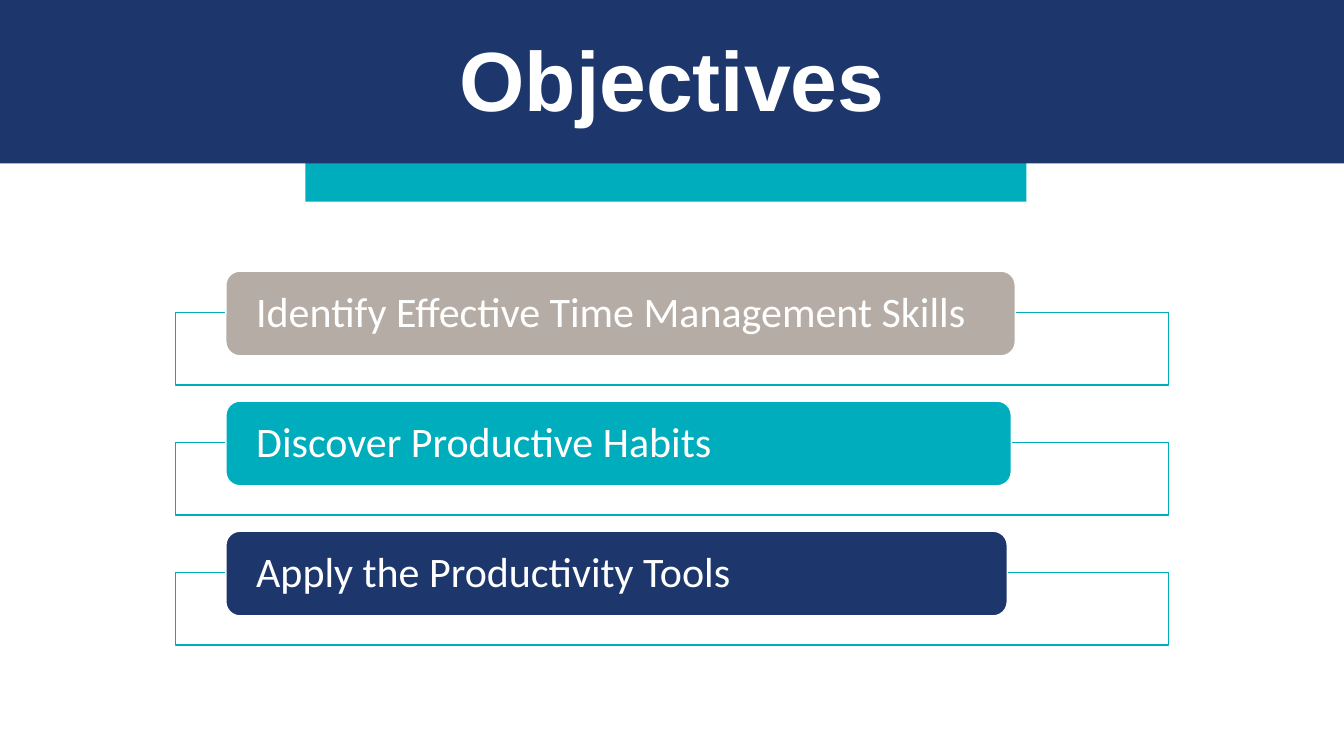
from pptx import Presentation
from pptx.dml.color import RGBColor
from pptx.enum.shapes import MSO_SHAPE as SHAPE
from pptx.enum.text import MSO_ANCHOR as ANCHOR, PP_ALIGN as ALIGN
from pptx.util import Inches, Pt

NAVY, TEAL, TAUPE, WHITE = "1D376C", "00ADBC", "B5ADA5", "FFFFFF"


def rgb(value):
    return RGBColor.from_string(value)


def write(tf, text, size=30, font="Calibri", color=WHITE, bold=False,
          align=ALIGN.LEFT, anchor=ANCHOR.TOP, spacing=None, margins=None):
    """Put one formatted paragraph in a text frame."""
    tf.word_wrap = True
    tf.vertical_anchor = anchor
    if margins:
        (tf.margin_left, tf.margin_top,
         tf.margin_right, tf.margin_bottom) = map(Inches, margins)
    p = tf.paragraphs[0]
    p.alignment = align
    if spacing:
        p.line_spacing = spacing
    r = p.add_run()
    r.text = text
    r.font.size, r.font.name, r.font.bold = Pt(size), font, bold
    r.font.color.rgb = rgb(color)


class SlideBuilder:
    def __init__(self, slide):
        self.s = slide

    def shape(self, kind, x, y, w, h, fill, line=None):
        sp = self.s.shapes.add_shape(kind, *map(Inches, (x, y, w, h)))
        sp.shadow.inherit = False
        sp.fill.solid()
        sp.fill.fore_color.rgb = rgb(fill)
        if line:
            sp.line.color.rgb = rgb(line)
            sp.line.width = Pt(1)
        else:
            sp.line.fill.background()
        return sp

    def title(self, text, x, y, w, h, **fmt):
        sp = self.s.shapes.title
        sp.left, sp.top, sp.width, sp.height = map(Inches, (x, y, w, h))
        write(sp.text_frame, text, **fmt)
        # Bring the title in front of the header band
        self.s.shapes[-1].element.addnext(sp.element)

    def objective(self, text, y, w, fill):
        self.shape(SHAPE.RECTANGLE, 1.74, y + 0.41, 9.85, 0.72, WHITE, TEAL)
        bar = self.shape(SHAPE.ROUNDED_RECTANGLE, 2.24, y, w, 0.84, fill, WHITE)
        write(bar.text_frame, text, anchor=ANCHOR.MIDDLE, spacing=0.9,
              margins=(0.26, 0, 0.26, 0))


def main():
    prs = Presentation()
    prs.slide_width, prs.slide_height = Inches(13.33), Inches(7.5)
    b = SlideBuilder(prs.slides.add_slide(prs.slide_layouts[5]))

    # Header
    b.shape(SHAPE.RECTANGLE, 3.03, 1.38, 7.15, 0.62, TEAL)
    b.shape(SHAPE.RECTANGLE, -0.12, 0, 13.53, 1.62, NAVY)
    b.title("Objectives", 0, 0.32, 13.33, 1.03, size=60, font="Arial",
            bold=True, align=ALIGN.CENTER, spacing=Pt(65))

    # Objectives, each bar slightly shorter than the one above
    objectives = [
        ("Identify Effective Time Management Skills", TAUPE),
        ("Discover Productive Habits", TEAL),
        ("Apply the Productivity Tools", NAVY),
    ]
    for i, (text, fill) in enumerate(objectives):
        b.objective(text, 2.69 + 1.29 * i, 7.83 - 0.04 * i, fill)

    prs.save("out.pptx")


if __name__ == "__main__":
    main()
